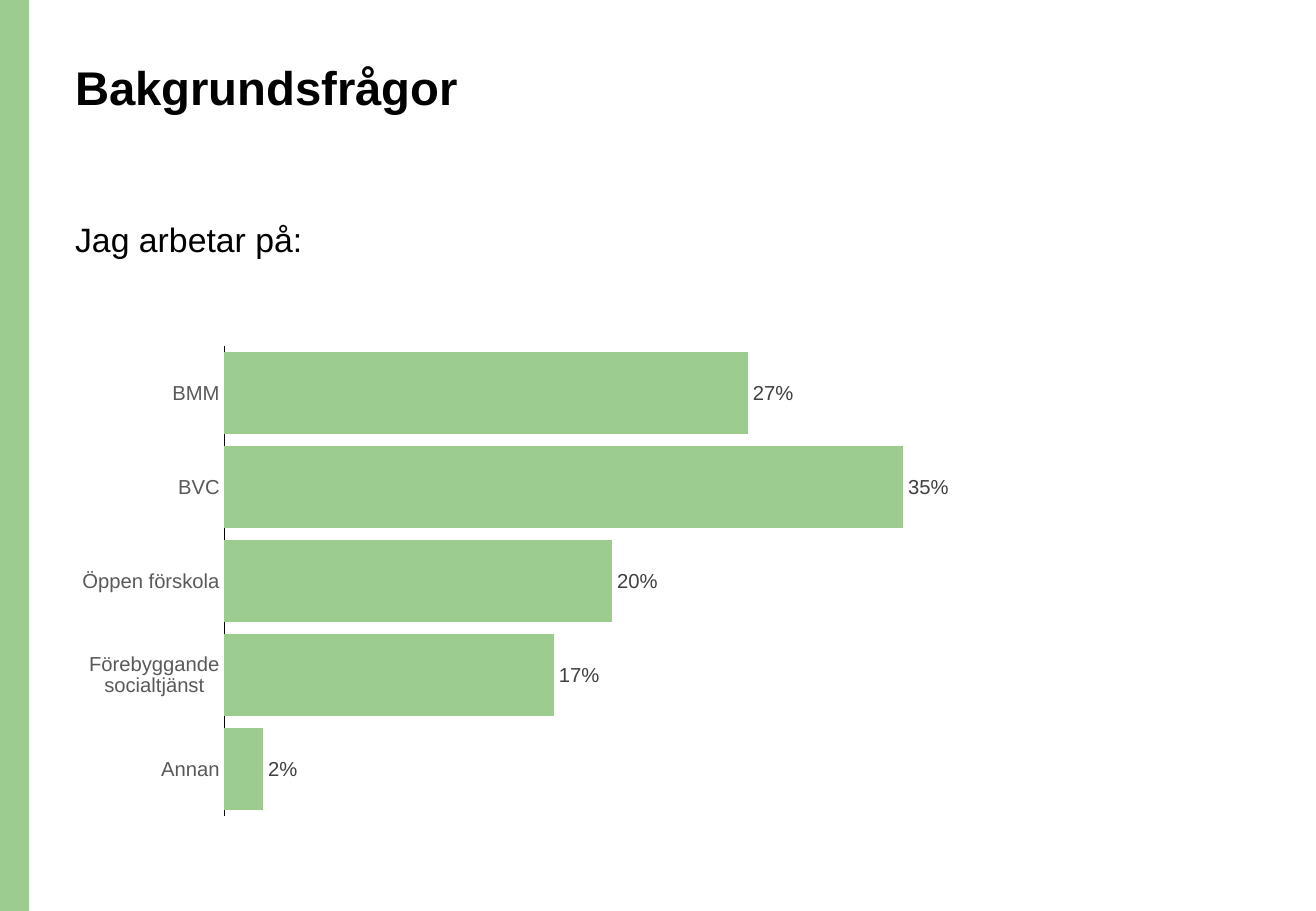
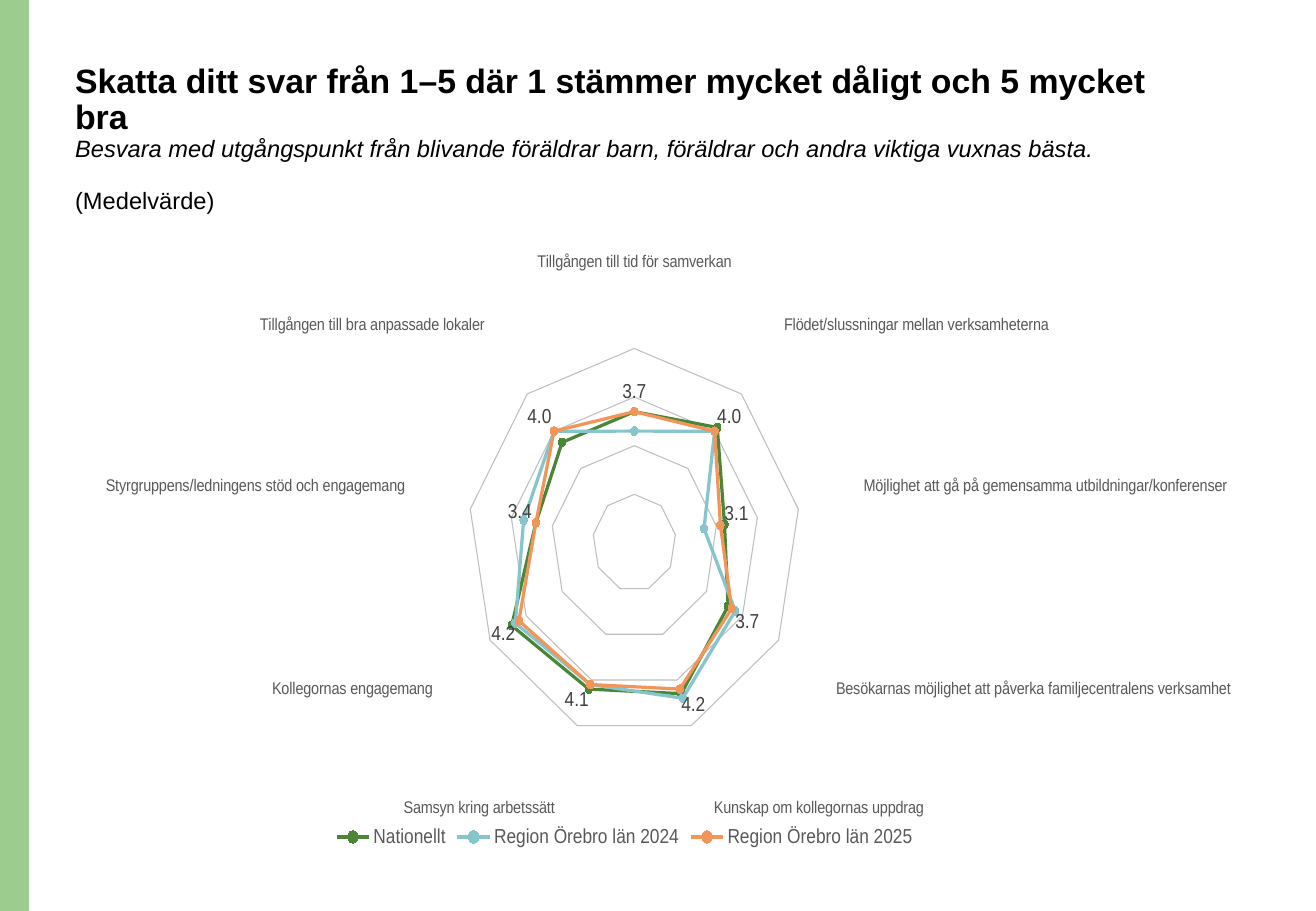
from lxml.etree import SubElement
from pptx import Presentation
from pptx.chart.data import CategoryChartData
from pptx.dml.color import RGBColor
from pptx.enum.chart import (XL_CHART_TYPE, XL_LABEL_POSITION, XL_LEGEND_POSITION,
                             XL_MARKER_STYLE, XL_TICK_MARK)
from pptx.enum.shapes import MSO_SHAPE
from pptx.enum.text import MSO_ANCHOR
from pptx.oxml.ns import qn
from pptx.util import Inches, Pt

COLORS = {
    "band": "9DCC8F", "text": "000000", "axis": "595959", "label": "404040",
    "spoke": "D9D9D9", "ring": "BFBFBF",
    "national": "4B8638", "region_2024": "85C5CB", "region_2025": "F29559",
}
FONT = "Arial"
MARGIN = 0.52
TITLE_TOP = 0.48
CONTENT_WIDTH = 9.34


class Deck:
    """Holds the shared style and the slide being built."""

    def __init__(self, width, height):
        self.prs = Presentation()
        self.prs.slide_width = Inches(width)
        self.prs.slide_height = Inches(height)
        self.slide = None

    def color(self, key):
        return RGBColor.from_string(COLORS[key])

    def style_font(self, font, size, color="text", bold=False, italic=False):
        font.name = FONT
        font.size = Pt(size)
        font.color.rgb = self.color(color)
        font.bold = bold
        font.italic = italic

    def style_line(self, line, color, width):
        line.color.rgb = self.color(color)
        line.width = Pt(width)

    def new_slide(self):
        self.slide = self.prs.slides.add_slide(self.prs.slide_layouts[6])
        band = self.slide.shapes.add_shape(
            MSO_SHAPE.RECTANGLE, 0, 0, Inches(0.24), self.prs.slide_height)
        band.shadow.inherit = False
        band.fill.solid()
        band.fill.fore_color.rgb = self.color("band")
        band.line.fill.background()

    def text(self, left, top, width, height, lines):
        box = self.slide.shapes.add_textbox(*map(Inches, (left, top, width, height)))
        frame = box.text_frame
        frame.word_wrap = True
        frame.vertical_anchor = MSO_ANCHOR.TOP
        for index, (words, size, style, gap) in enumerate(lines):
            paragraph = frame.paragraphs[0] if index == 0 else frame.add_paragraph()
            paragraph.line_spacing = 0.9
            paragraph.space_before = Pt(gap)
            run = paragraph.add_run()
            run.text = words
            self.style_font(run.font, size, **style)

    def title(self, lines):
        self.text(MARGIN, TITLE_TOP, CONTENT_WIDTH, 1.05, lines)

    def chart(self, kind, place, categories, series, label_size):
        data = CategoryChartData()
        data.categories = categories
        for name, values in series:
            data.add_series(name, values)
        chart = self.slide.shapes.add_chart(kind, *map(Inches, place), data).chart
        self.style_font(chart.font, 10)
        chart.has_title = False
        chart.has_legend = False
        chart.plots[0].vary_by_categories = False
        axis = chart.category_axis
        axis.reverse_order = True
        axis.major_tick_mark = axis.minor_tick_mark = XL_TICK_MARK.NONE
        self.style_font(axis.tick_labels.font, label_size, "axis")
        self.style_line(axis.format.line, "text", 0.75)
        chart.value_axis.visible = False
        return chart

    def value_labels(self, series, number_format):
        labels = series.data_labels
        labels.show_value = True
        labels.number_format = number_format
        labels.number_format_is_linked = False
        self.style_font(labels.font, 12, "label")
        return labels

    def bar_chart(self, place, categories, name, values, maximum):
        chart = self.chart(XL_CHART_TYPE.BAR_CLUSTERED, place, categories,
                           [(name, values)], 12)
        chart.category_axis.has_major_gridlines = False
        scale = chart.value_axis
        scale.has_major_gridlines = False
        scale.minimum_scale, scale.maximum_scale = 0, maximum
        plot = chart.plots[0]
        plot.gap_width = 15
        bars = plot.series[0]
        bars.format.fill.solid()
        bars.format.fill.fore_color.rgb = self.color("band")
        self.value_labels(bars, "0%").position = XL_LABEL_POSITION.OUTSIDE_END

    def radar_chart(self, place, categories, series, scale_range, plot_place):
        chart = self.chart(XL_CHART_TYPE.RADAR_MARKERS, place, categories,
                           [entry[:2] for entry in series], 10)
        scale = chart.value_axis
        scale.minimum_scale, scale.maximum_scale = scale_range
        scale.major_unit = 1
        for axis, color, width in ((chart.category_axis, "spoke", 0.75),
                                   (scale, "ring", 0)):
            axis.has_major_gridlines = True
            self.style_line(axis.major_gridlines.format.line, color, width)
        chart.has_legend = True
        chart.legend.position = XL_LEGEND_POSITION.BOTTOM
        chart.legend.include_in_layout = False
        self.style_font(chart.legend.font, 12, "axis")
        curves = list(chart.plots[0].series)
        for curve, (_, _, color) in zip(curves, series):
            self.style_line(curve.format.line, color, 2.25)
            marker = curve.marker
            marker.style = XL_MARKER_STYLE.CIRCLE
            marker.size = 5
            marker.format.fill.solid()
            marker.format.fill.fore_color.rgb = self.color(color)
            self.style_line(marker.format.line, color, 0.75)
        self.value_labels(curves[-1], "#,##0.0")
        self.place_plot(chart, plot_place)

    def place_plot(self, chart, plot_place):
        area = chart._chartSpace.find(".//" + qn("c:plotArea"))
        layout = area.find(qn("c:layout"))
        if layout is None:
            layout = SubElement(area, qn("c:layout"))
            area.insert(0, layout)
        manual = SubElement(layout, qn("c:manualLayout"))
        settings = [("layoutTarget", "inner"), ("xMode", "edge"), ("yMode", "edge")]
        settings += zip("xywh", plot_place)
        for tag, value in settings:
            SubElement(manual, qn("c:" + tag)).set("val", str(value))


def main():
    deck = Deck(10.83, 7.5)

    deck.new_slide()
    deck.text(MARGIN, 1.79, 6.03, 0.74, [("Jag arbetar på:", 20, {}, 0)])
    deck.title([("Bakgrundsfrågor", 28, {"bold": True}, 0)])
    workplaces = ["BMM", "BVC", "Öppen förskola", "Förebyggande socialtjänst", "Annan"]
    deck.bar_chart((MARGIN, 2.77, 7.87, 4.03), workplaces, "Series 1",
                   [0.27, 0.35, 0.2, 0.17, 0.02], 0.4)

    deck.new_slide()
    deck.title([
        ("Skatta ditt svar från 1–5 där 1 stämmer mycket dåligt och 5 mycket bra",
         20, {"bold": True}, 0),
        ("Besvara med utgångspunkt från blivande föräldrar barn, föräldrar och "
         "andra viktiga vuxnas bästa.", 14, {"italic": True}, 0),
        ("(Medelvärde)", 14, {}, 15.5),
    ])
    statements = [
        "Tillgången till tid för samverkan",
        "Tillgången till bra anpassade lokaler",
        "Styrgruppens/ledningens stöd och engagemang",
        "Kollegornas engagemang",
        "Samsyn kring arbetssätt",
        "Kunskap om kollegornas uppdrag",
        "Besökarnas möjlighet att påverka familjecentralens verksamhet",
        "Möjlighet att gå på gemensamma utbildningar/konferenser",
        "Flödet/slussningar mellan verksamheterna",
    ]
    ratings = [
        ("Nationellt", [3.7, 3.7, 3.4, 4.4, 4.2, 4.3, 3.6, 3.2, 4.1], "national"),
        ("Region Örebro län 2024",
         [3.3, 4, 3.7, 4.3, 4.1, 4.4, 3.8, 2.7, 4], "region_2024"),
        ("Region Örebro län 2025",
         [3.7, 4, 3.4, 4.2, 4.1, 4.2, 3.7, 3.1, 4], "region_2025"),
    ]
    deck.radar_chart((0.87, 1.87, CONTENT_WIDTH, 5.15), statements, ratings,
                     (1, 5.9), (0.3, 0.1, 0.42, 0.81))

    deck.prs.save("out.pptx")


if __name__ == "__main__":
    main()
